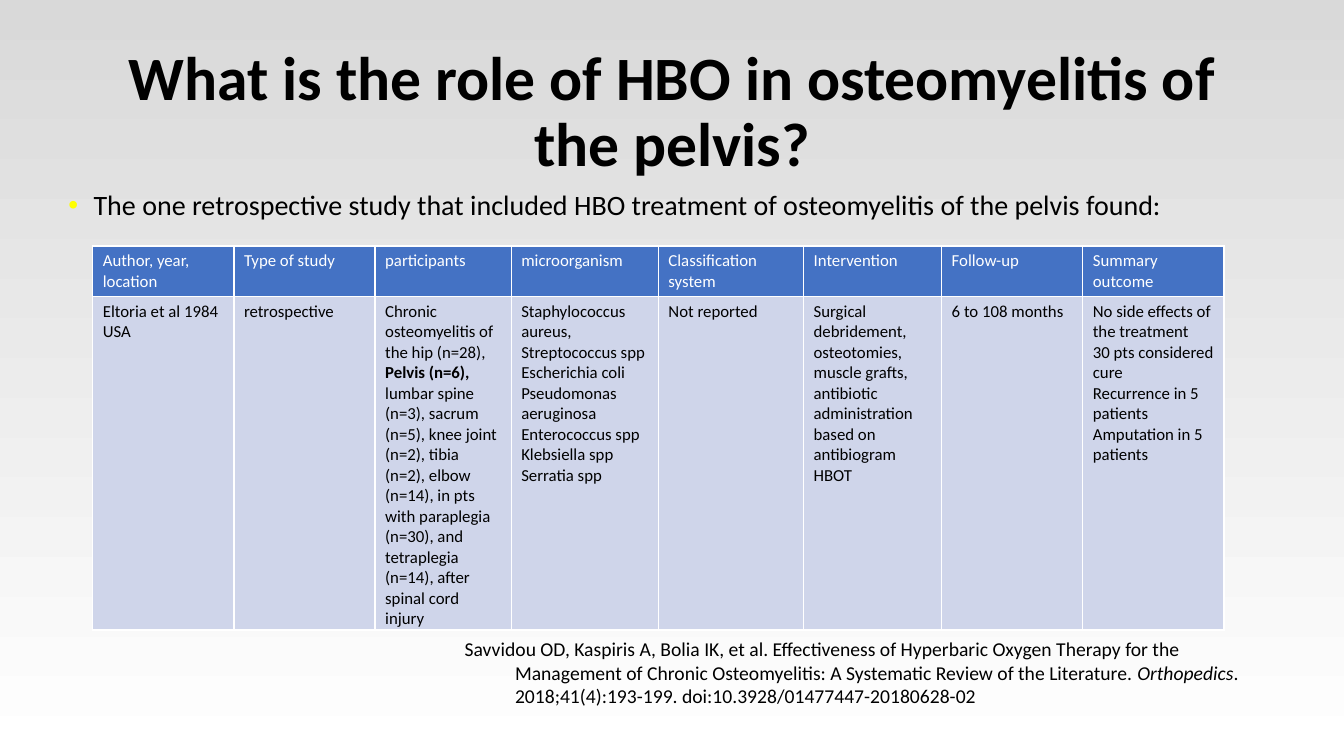
from pptx import Presentation
from pptx.dml.color import RGBColor
from pptx.enum import text as t
from pptx.oxml import parse_xml
from pptx.oxml.ns import nsdecls
from pptx.util import Inches, Pt

BLACK = RGBColor(0, 0, 0)
WHITE = RGBColor(0xFF, 0xFF, 0xFF)
GREY = RGBColor(0xD9, 0xD9, 0xD9)
BLUE = RGBColor(0x44, 0x72, 0xC4)
PALE = RGBColor(0xCF, 0xD5, 0xEA)
YELLOW = RGBColor(0xFF, 0xFF, 0)

WIDTHS = [1.4, 1.4, 1.35, 1.46, 1.44, 1.37, 1.4, 1.4]
HEIGHTS = [0.49, 3.31]
HEADS = ["Author, year, location", "Type of study", "participants",
         "microorganism", "Classification system", "Intervention",
         "Follow-up", "Summary outcome"]
# Each cell is a list of paragraphs, each paragraph a list of (text, style) runs.
STUDY = [
    [[("Eltoria et al 1984 USA", "")]],
    [[("retrospective", "")]],
    [[("Chronic osteomyelitis of the hip (n=28), ", ""),
      ("Pelvis (n=6), ", "b"),
      ("lumbar spine (n=3), sacrum (n=5), knee joint (n=2), tibia (n=2), "
       "elbow (n=14), in pts with paraplegia (n=30), and tetraplegia (n=14), "
       "after spinal cord injury", "")]],
    [[(name, "")] for name in (
        "Staphylococcus aureus, Streptococcus spp", "Escherichia coli",
        "Pseudomonas aeruginosa", "Enterococcus spp", "Klebsiella spp",
        "Serratia spp")],
    [[("Not reported", "")]],
    [[("Surgical debridement, osteotomies, muscle grafts, antibiotic "
       "administration based on antibiogram HBOT", "")]],
    [[("6 to 108 months", "")]],
    [[("No side effects of the treatment\n30 pts considered cure\n"
       "Recurrence in 5 patients\nAmputation in 5 patients", "")]],
]


def write(para, runs, size, color=BLACK):
    """Add (text, style) runs; b is bold, i is italic, a newline is a break."""
    for words, style in runs:
        for n, line in enumerate(words.split("\n")):
            if n:
                para.add_line_break()
            run = para.add_run()
            run.text = line
            font = run.font
            font.name, font.size = "Calibri", Pt(size)
            font.bold, font.italic = "b" in style, "i" in style
            font.color.rgb = color


def add_box(slide, box):
    frame = slide.shapes.add_textbox(*map(Inches, box)).text_frame
    frame.word_wrap = True
    return frame


def hang(para, inset):
    props = para._p.get_or_add_pPr()
    props.set("marL", str(Inches(inset)))
    props.set("indent", str(-Inches(inset)))
    return props


def add_title(slide, box):
    frame = add_box(slide, box)
    frame.vertical_anchor = t.MSO_ANCHOR.MIDDLE
    para = frame.paragraphs[0]
    para.alignment = t.PP_ALIGN.CENTER
    para.line_spacing = 0.9
    write(para, [("What is the role of HBO in osteomyelitis of the pelvis?",
                  "b")], 44)


def add_lead(slide, box):
    para = add_box(slide, box).paragraphs[0]
    para.line_spacing = 0.9
    para.space_before = Pt(10)
    props = hang(para, 0.25)
    for tag in (f'<a:buClr {nsdecls("a")}><a:srgbClr val="{YELLOW}"/></a:buClr>',
                f'<a:buFont {nsdecls("a")} typeface="Arial"/>',
                f'<a:buChar {nsdecls("a")} char="•"/>'):
        props.append(parse_xml(tag))
    write(para, [("The one retrospective study that included HBO treatment of "
                  "osteomyelitis of the pelvis found:", "")], 20)


def add_source(slide, box):
    para = add_box(slide, box).paragraphs[0]
    hang(para, 0.5)
    write(para, [
        ("Savvidou OD, Kaspiris A, Bolia IK, et al. Effectiveness of Hyperbaric "
         "Oxygen Therapy for the Management of Chronic Osteomyelitis: A "
         "Systematic Review of the Literature. ", ""),
        ("Orthopedics", "i"),
        (". 2018;41(4):193-199. doi:10.3928/01477447-20180628-02", "")], 14)


def fill_cell(cell, paras, back, color):
    cell.fill.solid()
    cell.fill.fore_color.rgb = back
    props = cell._tc.get_or_add_tcPr()
    for n, side in enumerate("LRTB"):
        props.insert(n, parse_xml(
            f'<a:ln{side} {nsdecls("a")} w="{Pt(1)}"><a:solidFill>'
            f'<a:srgbClr val="{WHITE}"/></a:solidFill></a:ln{side}>'))
    frame = cell.text_frame
    for n, runs in enumerate(paras):
        para = frame.add_paragraph() if n else frame.paragraphs[0]
        write(para, runs, 12, color)


def add_study(slide, left, top):
    heads = [[[(head, "")]] for head in HEADS]
    box = map(Inches, (left, top, sum(WIDTHS), sum(HEIGHTS)))
    table = slide.shapes.add_table(2, len(WIDTHS), *box).table
    for col, width in zip(table.columns, WIDTHS):
        col.width = Inches(width)
    for row, height in zip(table.rows, HEIGHTS):
        row.height = Inches(height)
    looks = [(heads, BLUE, WHITE), (STUDY, PALE, BLACK)]
    for row, (cells, back, color) in zip(table.rows, looks):
        for cell, paras in zip(row.cells, cells):
            fill_cell(cell, paras, back, color)


def paint_back(slide):
    fill = slide.background.fill
    fill.gradient()
    fill.gradient_angle = 90
    for stop, color in zip(fill.gradient_stops, (WHITE, GREY)):
        stop.color.rgb = color


def main():
    deck = Presentation()
    deck.slide_width, deck.slide_height = Inches(13.33), Inches(7.5)
    slide = deck.slides.add_slide(deck.slide_layouts[6])
    paint_back(slide)
    add_title(slide, (0.92, 0.4, 11.5, 1.45))
    add_source(slide, (4.51, 6.27, 8.39, 0.81))
    add_lead(slide, (0.58, 1.85, 12.49, 4.48))
    add_study(slide, 0.92, 2.44)
    deck.save("out.pptx")


if __name__ == "__main__":
    main()
